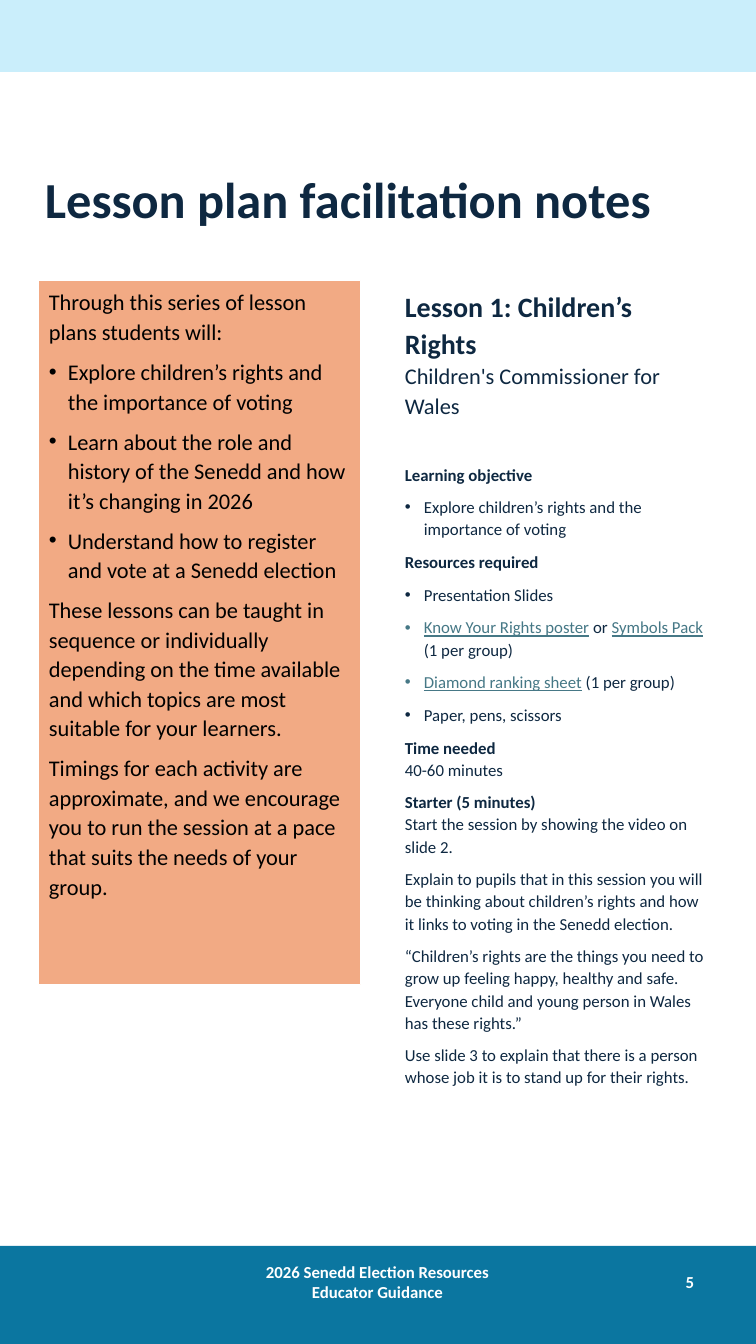
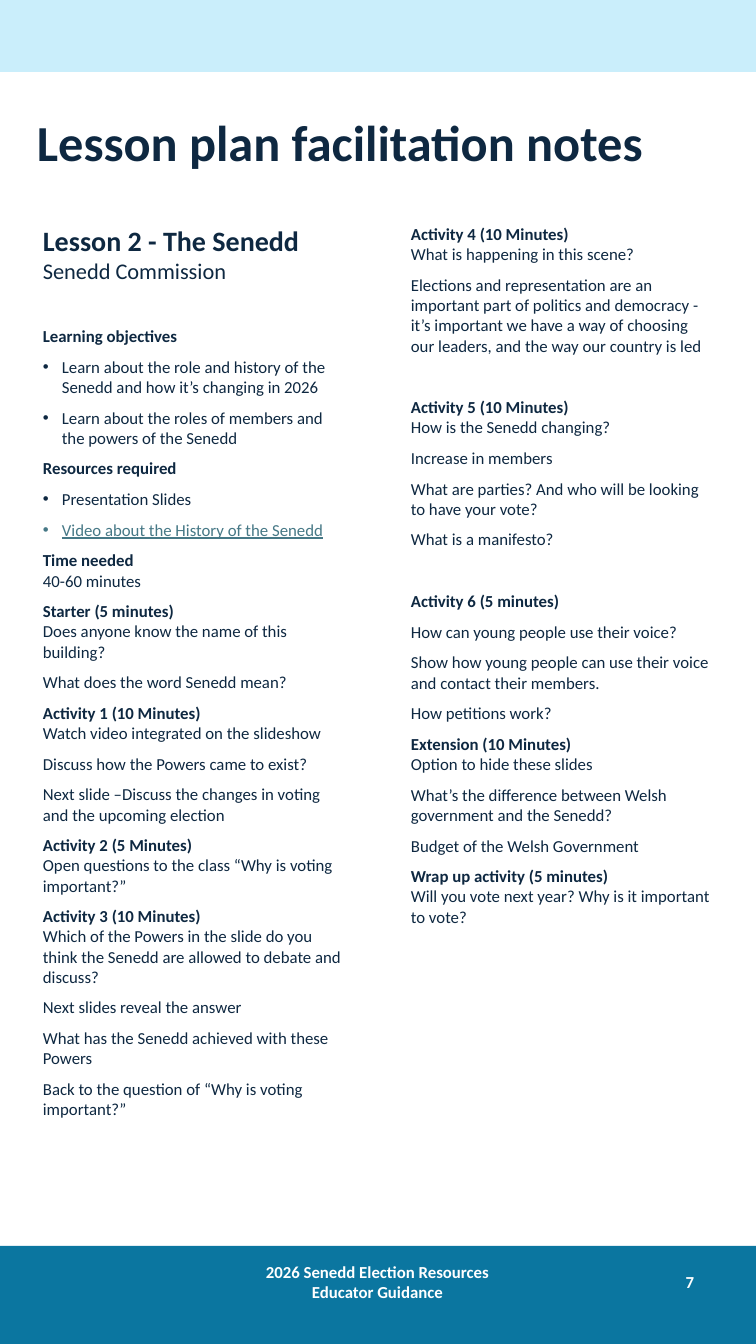
from collections import namedtuple
from copy import deepcopy

from lxml.etree import SubElement
from pptx import Presentation
from pptx.dml.color import RGBColor
from pptx.enum.shapes import MSO_SHAPE as Shape
from pptx.enum.text import MSO_ANCHOR as Anchor, PP_ALIGN as Align
from pptx.oxml.ns import qn
from pptx.util import Emu, Pt

# Shared measures and styles
EMU_PER_PX = 914400 / 100.8
SLIDE_WIDTH, SLIDE_HEIGHT = 756, 1344
HEADER_HEIGHT, FOOTER_TOP = 72, 1246
COLUMN_WIDTH = 322
FONT = "Calibri"
NAVY, TEAL, PALE_BLUE = "0E2841", "0B76A0", "CAEEFB"
PEACH, LINK, WHITE, BLACK = "F2AA84", "467886", "FFFFFF", "000000"
PARAGRAPH_SPACE = 7.5
BODY_LINE = 14.6

Style = namedtuple("Style", "size color bold underline", defaults=(False, False))
STYLES = {
    "title": Style(36, NAVY, True),
    "lesson": Style(20, NAVY, True),
    "author": Style(16, NAVY),
    "heading": Style(12, NAVY, True),
    "body": Style(12, NAVY),
    "link": Style(12, LINK, False, True),
    "intro": Style(16, BLACK),
    "footer": Style(12, WHITE, True),
}

# A block is one paragraph; each run is a (style, text) pair, "\n" breaks the line
Block = namedtuple("Block", "runs bullet gap", defaults=(False, False))


def px(value):
    return Emu(round(value * EMU_PER_PX))


def color(hex_string):
    return RGBColor.from_string(hex_string)


# Kinds of paragraph
def plain(text, style="body"):
    return Block([(style, text)])


def bullet(*runs, style="body"):
    return Block([(style, run) if isinstance(run, str) else run for run in runs], True)


def heading(title, text="", gap=False):
    runs = [("heading", title)]
    if text:
        runs += [("body", "\n"), ("body", text)]
    return Block(runs, gap=gap)


def link(text):
    return ("link", text)


# Text formatting
def format_run(run, style_name):
    style = STYLES[style_name]
    run.font.name = FONT
    run.font.size = Pt(style.size)
    run.font.bold = style.bold
    run.font.underline = style.underline
    run.font.color.rgb = color(style.color)


def add_break(paragraph):
    """Break the line in the size of the run before it."""
    paragraph.add_line_break()
    line_break = paragraph._p.findall(qn("a:br"))[-1]
    line_break.append(deepcopy(paragraph.runs[-1].font._element))


def set_bullet(paragraph):
    properties = paragraph._p.get_or_add_pPr()
    properties.set("marL", str(px(19)))
    properties.set("indent", str(px(-19)))
    SubElement(properties, qn("a:buFont"), typeface="Arial")
    SubElement(properties, qn("a:buChar"), char="•")


def write_blocks(text_frame, blocks, spacing=1.0, align=Align.LEFT):
    text_frame.word_wrap = True
    for index, block in enumerate(blocks):
        paragraph = text_frame.add_paragraph() if index else text_frame.paragraphs[0]
        paragraph.alignment = align
        paragraph.line_spacing = spacing
        extra = PARAGRAPH_SPACE + BODY_LINE * spacing if block.gap else 0
        paragraph.space_before = Pt(PARAGRAPH_SPACE + extra)
        if block.bullet:
            set_bullet(paragraph)
        for style, text in block.runs:
            if text == "\n":
                add_break(paragraph)
            else:
                run = paragraph.add_run()
                run.text = text
                format_run(run, style)


# Kinds of element
def add_text(slide, box, blocks, spacing=1.0, anchor=Anchor.TOP, align=Align.LEFT):
    shape = slide.shapes.add_textbox(*map(px, box))
    shape.text_frame.vertical_anchor = anchor
    write_blocks(shape.text_frame, blocks, spacing, align)


def add_rectangle(slide, box, fill, line=None):
    shape = slide.shapes.add_shape(Shape.RECTANGLE, *map(px, box))
    shape.shadow.inherit = False
    shape.fill.solid()
    shape.fill.fore_color.rgb = color(fill)
    if line:
        shape.line.color.rgb = color(line)
        shape.line.width = Pt(0.75)
    else:
        shape.line.fill.background()
    return shape


def add_page(presentation, number, title_left, title_top):
    """Add a slide with its bands, title and footer."""
    slide = presentation.slides.add_slide(presentation.slide_layouts[6])
    footer_height = SLIDE_HEIGHT - FOOTER_TOP
    add_rectangle(slide, (0, 0, SLIDE_WIDTH, HEADER_HEIGHT), PALE_BLUE)
    add_rectangle(slide, (0, FOOTER_TOP, SLIDE_WIDTH, footer_height), TEAL)
    add_text(slide, (title_left, title_top, 652, 260),
             [plain("Lesson plan facilitation notes", "title")], 0.9, Anchor.MIDDLE)
    footers = [
        (250, 255, "2026 Senedd Election Resources Educator Guidance", Align.CENTER),
        (534, 170, str(number), Align.RIGHT),
    ]
    for left, width, text, align in footers:
        add_text(slide, (left, FOOTER_TOP, width, HEADER_HEIGHT),
                 [plain(text, "footer")], 1.0, Anchor.MIDDLE, align)
    return slide


# Content
INTRODUCTION = [
    plain("Through this series of lesson plans students will:", "intro"),
    bullet("Explore children’s rights and the importance of voting", style="intro"),
    bullet("Learn about the role and history of the Senedd and how it’s changing in 2026",
           style="intro"),
    bullet("Understand how to register and vote at a Senedd election", style="intro"),
    plain("These lessons can be taught in sequence or individually depending on the time "
          "available and which topics are most suitable for your learners.", "intro"),
    plain("Timings for each activity are approximate, and we encourage you to run the "
          "session at a pace that suits the needs of your group.", "intro"),
]

LESSON_1 = [
    Block([("lesson", "Lesson 1: Children’s Rights"), ("lesson", "\n"),
           ("author", "Children's Commissioner for Wales")]),
    heading("Learning objective", gap=True),
    bullet("Explore children’s rights and the importance of voting"),
    heading("Resources required"),
    bullet("Presentation Slides"),
    bullet(link("Know Your Rights poster"), " or ", link("Symbols Pack"), " (1 per group)"),
    bullet(link("Diamond ranking sheet"), " (1 per group)"),
    bullet("Paper, pens, scissors"),
    heading("Time needed", "40-60 minutes"),
    heading("Starter (5 minutes)", "Start the session by showing the video on slide 2."),
    plain("Explain to pupils that in this session you will be thinking about children’s "
          "rights and how it links to voting in the Senedd election."),
    plain("“Children’s rights are the things you need to grow up feeling happy, healthy "
          "and safe. Everyone child and young person in Wales has these rights.”"),
    plain("Use slide 3 to explain that there is a person whose job it is to stand up for "
          "their rights."),
]

LESSON_2_START = [
    Block([("lesson", "Lesson 2 - The Senedd "), ("author", "Senedd Commission")]),
    heading("Learning objectives", gap=True),
    bullet("Learn about the role and history of the Senedd and how it’s changing in 2026"),
    bullet("Learn about the roles of members and the powers of the Senedd"),
    heading("Resources required"),
    bullet("Presentation Slides"),
    bullet(link("Video about the History of the Senedd")),
    heading("Time needed", "40-60 minutes"),
    heading("Starter (5 minutes)", "Does anyone know the name of this building?"),
    plain("What does the word Senedd mean?"),
    heading("Activity 1 (10 Minutes)", "Watch video integrated on the slideshow"),
    plain("Discuss how the Powers came to exist?"),
    plain("Next slide –Discuss the changes in voting and the upcoming election"),
    heading("Activity 2 (5 Minutes)",
            "Open questions to the class “Why is voting important?”"),
    heading("Activity 3 (10 Minutes)",
            "Which of the Powers in the slide do you think the Senedd are allowed to "
            "debate and discuss?"),
    plain("Next slides reveal the answer"),
    plain("What has the Senedd achieved with these Powers"),
    plain("Back to the question of “Why is voting important?”"),
]

LESSON_2_END = [
    heading("Activity 4 (10 Minutes)", "What is happening in this scene?"),
    plain("Elections and representation are an important part of politics and democracy - "
          "it’s important we have a way of choosing our leaders, and the way our country "
          "is led"),
    heading("Activity 5 (10 Minutes)", "How is the Senedd changing?", gap=True),
    plain("Increase in members"),
    plain("What are parties? And who will be looking to have your vote?"),
    plain("What is a manifesto?"),
    heading("Activity 6 (5 minutes)", gap=True),
    plain("How can young people use their voice?"),
    plain("Show how young people can use their voice and contact their members."),
    plain("How petitions work?"),
    heading("Extension (10 Minutes)", "Option to hide these slides"),
    plain("What’s the difference between Welsh government and the Senedd?"),
    plain("Budget of the Welsh Government"),
    heading("Wrap up activity (5 minutes)",
            "Will you vote next year? Why is it important to vote?"),
]


def build_lesson_1(presentation):
    slide = add_page(presentation, 5, 35, 72)
    panel = add_rectangle(slide, (39, 281, COLUMN_WIDTH, 704), PEACH, WHITE)
    panel.text_frame.vertical_anchor = Anchor.TOP
    write_blocks(panel.text_frame, INTRODUCTION, 1.1)
    add_text(slide, (395, 281, COLUMN_WIDTH, 853), LESSON_1, 1.1)


def build_lesson_2(presentation):
    slide = add_page(presentation, 7, 27, 15)
    for left, blocks in ((33, LESSON_2_START), (401, LESSON_2_END)):
        add_text(slide, (left, 219, COLUMN_WIDTH, 1005), blocks)


def main():
    presentation = Presentation()
    presentation.slide_width = px(SLIDE_WIDTH)
    presentation.slide_height = px(SLIDE_HEIGHT)
    build_lesson_1(presentation)
    build_lesson_2(presentation)
    presentation.save("out.pptx")


if __name__ == "__main__":
    main()
